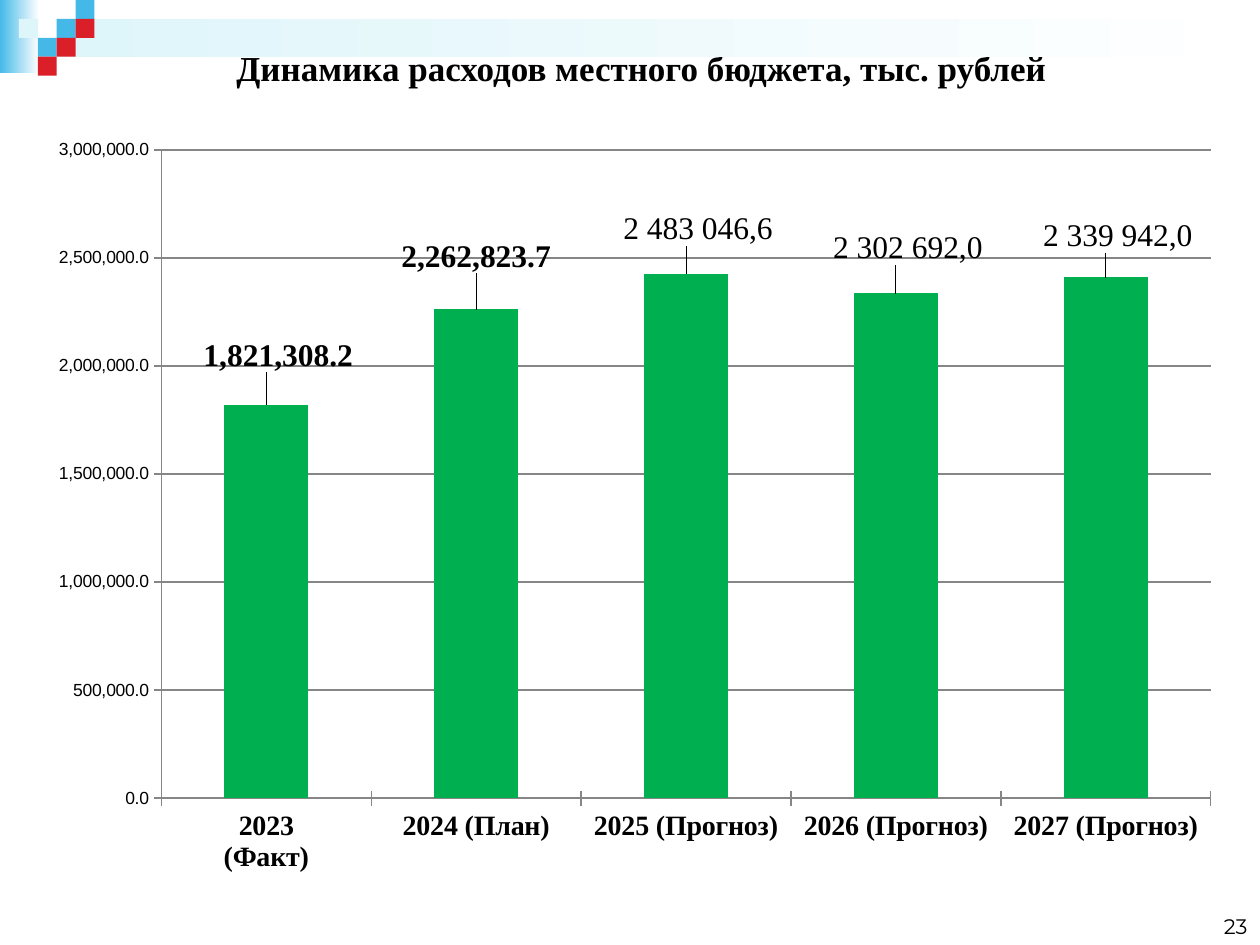
"""Build the slide on local budget spending with a column chart."""
import pptx
import pptx.chart.data
import pptx.dml.color
import pptx.enum.chart
import pptx.enum.shapes
import pptx.enum.text
import pptx.oxml
import pptx.oxml.ns
import pptx.util

RGBColor = pptx.dml.color.RGBColor
Inches, Pt = pptx.util.Inches, pptx.util.Pt
PP_ALIGN, MSO_ANCHOR = pptx.enum.text.PP_ALIGN, pptx.enum.text.MSO_ANCHOR
BLUE = RGBColor(0x44, 0xB9, 0xE8)
PALE = RGBColor(0xDE, 0xF5, 0xFA)
RED = RGBColor(0xDA, 0x1F, 0x28)
GREEN = RGBColor(0x00, 0xB0, 0x50)
GRAY = RGBColor(0x86, 0x86, 0x86)
BLACK = RGBColor(0, 0, 0)
WHITE = RGBColor(255, 255, 255)
SERIF = "Times New Roman"
NUMBER = "#,##0.0"
TILE = 0.15
TILES = [(3, 1, BLUE), (4, 0, BLUE), (4, 1, RED), (2, 2, BLUE),
         (1, 1, PALE), (3, 2, RED), (2, 3, RED)]
BARS = [("2023\n(Факт)", 1821308.2, None, 0.01, -0.035),
        ("2024 (План)", 2262823.7, None, 0, -0.04),
        ("2025 (Прогноз)", 2425755.3, "2 483 046,6", 0.01, -0.03),
        ("2026 (Прогноз)", 2337042.2, "2 302 692,0", 0.01, -0.03),
        ("2027 (Прогноз)", 2410551.5, "2 339 942,0", 0.01, -0.025)]


def set_font(font, size, name, bold=False):
    font.size, font.name, font.bold = Pt(size), name, bold
    font.color.rgb = BLACK


def add_rect(s, x, y, w, h, color, fade=False):
    sp = s.shapes.add_shape(pptx.enum.shapes.MSO_SHAPE.RECTANGLE,
                            Inches(x), Inches(y), Inches(w), Inches(h))
    sp.shadow.inherit = False
    sp.line.fill.background()
    if fade:
        sp.fill.gradient()
        sp.fill.gradient_angle = 0
        for stop, rgb in zip(sp.fill.gradient_stops, (color, WHITE)):
            stop.color.rgb = rgb
    else:
        sp.fill.solid()
        sp.fill.fore_color.rgb = color


def add_corner(s):
    add_rect(s, 0, 0, 0.31, 0.58, BLUE, fade=True)
    add_rect(s, 3 * TILE, TILE, 10 - 3 * TILE, 2 * TILE, PALE, fade=True)
    for col, row, color in TILES:
        add_rect(s, col * TILE, row * TILE, TILE, TILE, color)


def write(sp, text, size, name, align, anchor, bold=False):
    tf = sp.text_frame
    tf.text = text
    tf.word_wrap = True
    tf.vertical_anchor = anchor
    p = tf.paragraphs[0]
    p.alignment = align
    set_font(p.runs[0].font, size, name, bold)


def add_title(s, text):
    sp = s.shapes.title
    sp.left, sp.top, sp.width, sp.height = map(Inches, (0.59, 0.29, 9, 0.49))
    write(sp, text, 20, SERIF, PP_ALIGN.CENTER, MSO_ANCHOR.MIDDLE, True)


def add_page_number(s, text):
    sp = s.shapes.add_textbox(*map(Inches, (7.67, 7, 2.33, 0.5)))
    write(sp, text, 12, "Montserrat", PP_ALIGN.RIGHT, MSO_ANCHOR.BOTTOM)
    sp.text_frame.margin_right = Inches(0.1)


def make_layout(inner=False, **values):
    target = '<c:layoutTarget val="inner"/>' if inner else ""
    modes = "".join(f'<c:{k}Mode val="edge"/>' for k in "xy") if inner else ""
    sizes = "".join(f'<c:{k} val="{v}"/>' for k, v in values.items())
    return pptx.oxml.parse_xml(
        f'<c:layout {pptx.oxml.ns.nsdecls("c")}><c:manualLayout>'
        f'{target}{modes}{sizes}</c:manualLayout></c:layout>')


def format_axis(axis):
    axis.major_tick_mark = pptx.enum.chart.XL_TICK_MARK.CROSS
    axis.format.line.color.rgb = GRAY
    axis.format.line.width = Pt(0.75)


def format_labels(series):
    labels = series.data_labels
    labels.show_value = True
    labels.number_format, labels.number_format_is_linked = NUMBER, False
    set_font(labels.font, 18, SERIF, True)
    for i, (_, _, text, _, _) in enumerate(BARS):
        label = series.points[i].data_label
        if text:
            label.text_frame.text = text
            set_font(label.text_frame.paragraphs[0].runs[0].font, 18, SERIF)
        else:
            set_font(label.font, 18, SERIF, True)
        label.position = pptx.enum.chart.XL_LABEL_POSITION.OUTSIDE_END
    nodes = series._element.iter(pptx.oxml.ns.qn("c:dLbl"))
    for node, (*_, dx, dy) in zip(list(nodes), BARS):
        node.insert(1, make_layout(x=dx, y=dy))


def add_budget_chart(s):
    data = pptx.chart.data.CategoryChartData(number_format=NUMBER)
    data.categories = [bar[0] for bar in BARS]
    data.add_series("Series 1", [bar[1] for bar in BARS])
    chart = s.shapes.add_chart(
        pptx.enum.chart.XL_CHART_TYPE.COLUMN_CLUSTERED,
        *map(Inches, (0.28, 0.99, 9.53, 6.06)), data).chart
    chart.has_legend = chart.has_title = False
    set_font(chart.font, 10, "Arial")
    plot = chart.plots[0]
    plot.gap_width = 150
    plot.vary_by_categories = False
    series = plot.series[0]
    series.format.fill.solid()
    series.format.fill.fore_color.rgb = GREEN
    format_labels(series)
    format_axis(chart.category_axis)
    set_font(chart.category_axis.tick_labels.font, 16, SERIF, True)
    axis = chart.value_axis
    format_axis(axis)
    axis.minimum_scale, axis.maximum_scale, axis.major_unit = 0, 3000000, 500000
    axis.tick_labels.number_format = NUMBER
    axis.tick_labels.number_format_is_linked = False
    axis.major_gridlines.format.line.color.rgb = GRAY
    area = chart._chartSpace.chart.plotArea
    for old in area.findall(pptx.oxml.ns.qn("c:layout")):
        area.remove(old)
    area.insert(0, make_layout(True, x=0.105, y=0.033, w=0.874, h=0.849))


def main():
    prs = pptx.Presentation()
    prs.slide_width, prs.slide_height = Inches(10), Inches(7.5)
    s = prs.slides.add_slide(prs.slide_layouts[5])
    add_corner(s)
    add_title(s, "Динамика расходов местного бюджета, тыс. рублей")
    add_page_number(s, "23")
    add_budget_chart(s)
    prs.save("out.pptx")


if __name__ == "__main__":
    main()
